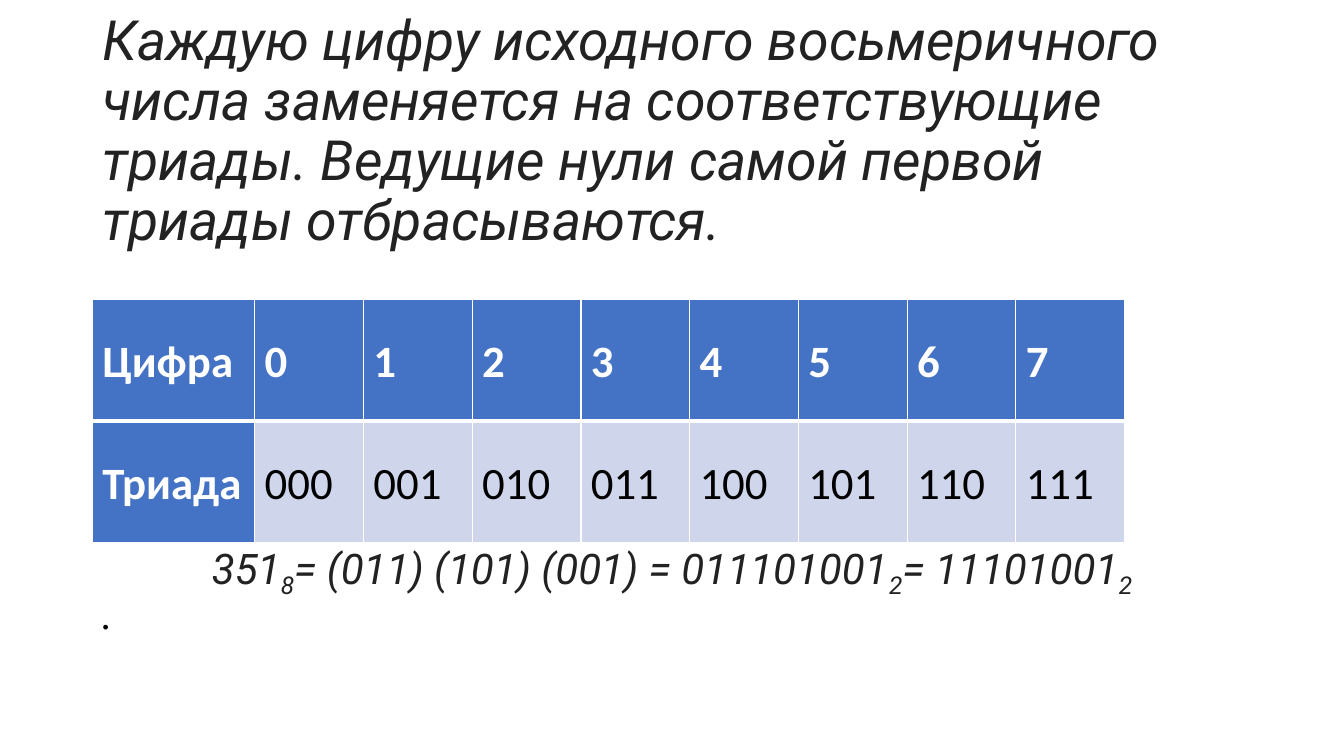
from pptx import Presentation
from pptx import util as u
from pptx.dml.color import RGBColor
from pptx.enum import text
from pptx.oxml import parse_xml
from pptx.oxml.ns import nsdecls

LEFT = 2.33


def color(value):
    return RGBColor.from_string(value)


class SlideBuilder:
    """Holds the style and the current slide."""
    INK, WHITE, BLACK = "222222", "FFFFFF", "000000"
    HEADER, BAND = "4472C4", "CFD5EA"
    ITALIC_FONT, PLAIN_FONT = "Roboto", "Calibri"

    def __init__(self, presentation):
        self.slide = presentation.slides.add_slide(presentation.slide_layouts[1])

    def style(self, font, name, size, ink, bold=False, italic=False):
        font.name, font.size = name, u.Pt(size)
        font.bold, font.italic = bold, italic
        font.color.rgb = color(ink)

    def place(self, shape, top, height, anchor):
        shape.left, shape.top = u.Cm(LEFT), u.Cm(top)
        shape.width, shape.height = u.Cm(29.21), u.Cm(height)
        frame = shape.text_frame
        frame.word_wrap = True
        frame.auto_size = text.MSO_AUTO_SIZE.NONE
        frame.vertical_anchor = anchor
        return frame

    def title(self, words):
        frame = self.place(self.slide.shapes.title, 1.02, 6.15, text.MSO_ANCHOR.MIDDLE)
        frame.margin_bottom = u.Cm(1.65)
        frame.text = words
        paragraph = frame.paragraphs[0]
        paragraph.alignment = text.PP_ALIGN.LEFT
        paragraph.line_spacing = 0.9
        self.style(paragraph.font, self.ITALIC_FONT, 39.6, self.INK, italic=True)

    def body(self, formula):
        frame = self.place(self.slide.placeholders[1], 5.08, 12.09, text.MSO_ANCHOR.TOP)
        frame.margin_top = u.Cm(8.6)

        # Formula: each part is a number and its base
        paragraph = frame.paragraphs[0]
        self.list_format(paragraph, 0, "<a:buNone %s/>", before=0)
        paragraph.alignment = text.PP_ALIGN.CENTER
        self.style(paragraph.font, self.ITALIC_FONT, 30.1, self.INK, italic=True)
        for number, base in formula:
            paragraph.add_run().text = number
            subscript = paragraph.add_run()
            subscript.text = base
            subscript._r.get_or_add_rPr().set("baseline", "-25000")

        # Bullet with a non-breaking space
        paragraph = frame.add_paragraph()
        self.list_format(paragraph, 0.64, '<a:buChar %s char="•"/>', before=10)
        paragraph.add_run().text = " "
        self.style(paragraph.font, self.PLAIN_FONT, 12.6, self.BLACK)

    def list_format(self, paragraph, indent, bullet, before):
        paragraph.line_spacing = 0.9
        paragraph.space_before, paragraph.space_after = u.Pt(before), u.Pt(7)
        properties = paragraph._p.get_or_add_pPr()
        properties.set("marL", str(u.Cm(indent)))
        properties.set("indent", str(-u.Cm(indent)))
        properties.append(parse_xml(bullet % nsdecls("a")))

    def table(self, rows, top, widths, row_height):
        frame = self.slide.shapes.add_table(
            len(rows), len(widths), u.Cm(LEFT), u.Cm(top),
            u.Cm(sum(widths)), u.Cm(row_height * len(rows)))
        table = frame.table
        for column, width in zip(table.columns, widths):
            column.width = u.Cm(width)
        for row_index, values in enumerate(rows):
            table.rows[row_index].height = u.Cm(row_height)
            for column_index, value in enumerate(values):
                self.cell(table.cell(row_index, column_index), value,
                          row_index, header=row_index == 0 or column_index == 0)

    def cell(self, cell, value, row_index, header):
        # The line under the first row is thicker
        thick = "B" if row_index == 0 else "T"
        for side in "LRTB":
            width = u.Pt(3 if side == thick else 1)
            cell._tc.get_or_add_tcPr().append(parse_xml(
                f'<a:ln{side} {nsdecls("a")} w="{width}"><a:solidFill>'
                f'<a:srgbClr val="{self.WHITE}"/></a:solidFill></a:ln{side}>'))
        cell.fill.solid()
        cell.fill.fore_color.rgb = color(self.HEADER if header else self.BAND)
        cell.margin_left = cell.margin_right = u.Cm(0.25)
        cell.margin_top = cell.margin_bottom = u.Cm(0.25)
        cell.vertical_anchor = text.MSO_ANCHOR.MIDDLE
        cell.text = value
        paragraph = cell.text_frame.paragraphs[0]
        paragraph.line_spacing, paragraph.space_after = 1.07, u.Pt(8)
        self.style(paragraph.font, self.PLAIN_FONT, 32,
                   self.WHITE if header else self.BLACK, bold=header)


def main():
    presentation = Presentation()
    presentation.slide_width, presentation.slide_height = u.Cm(33.87), u.Cm(19.05)
    builder = SlideBuilder(presentation)

    # Rule and worked example
    builder.title("Каждую цифру исходного восьмеричного числа заменяется на "
                  "соответствующие триады. Ведущие нули самой первой триады "
                  "отбрасываются.")
    builder.body([("351", "8"),
                  ("= (011) (101) (001) = 011101001", "2"),
                  ("= 11101001", "2")])

    # Octal digits and their binary triads
    digits = range(8)
    builder.table([["Цифра"] + [str(digit) for digit in digits],
                   ["Триада"] + [f"{digit:03b}" for digit in digits]],
                  top=7.54, widths=[4.09] + [2.74] * 8, row_height=3.07)

    presentation.save("out.pptx")


if __name__ == "__main__":
    main()
